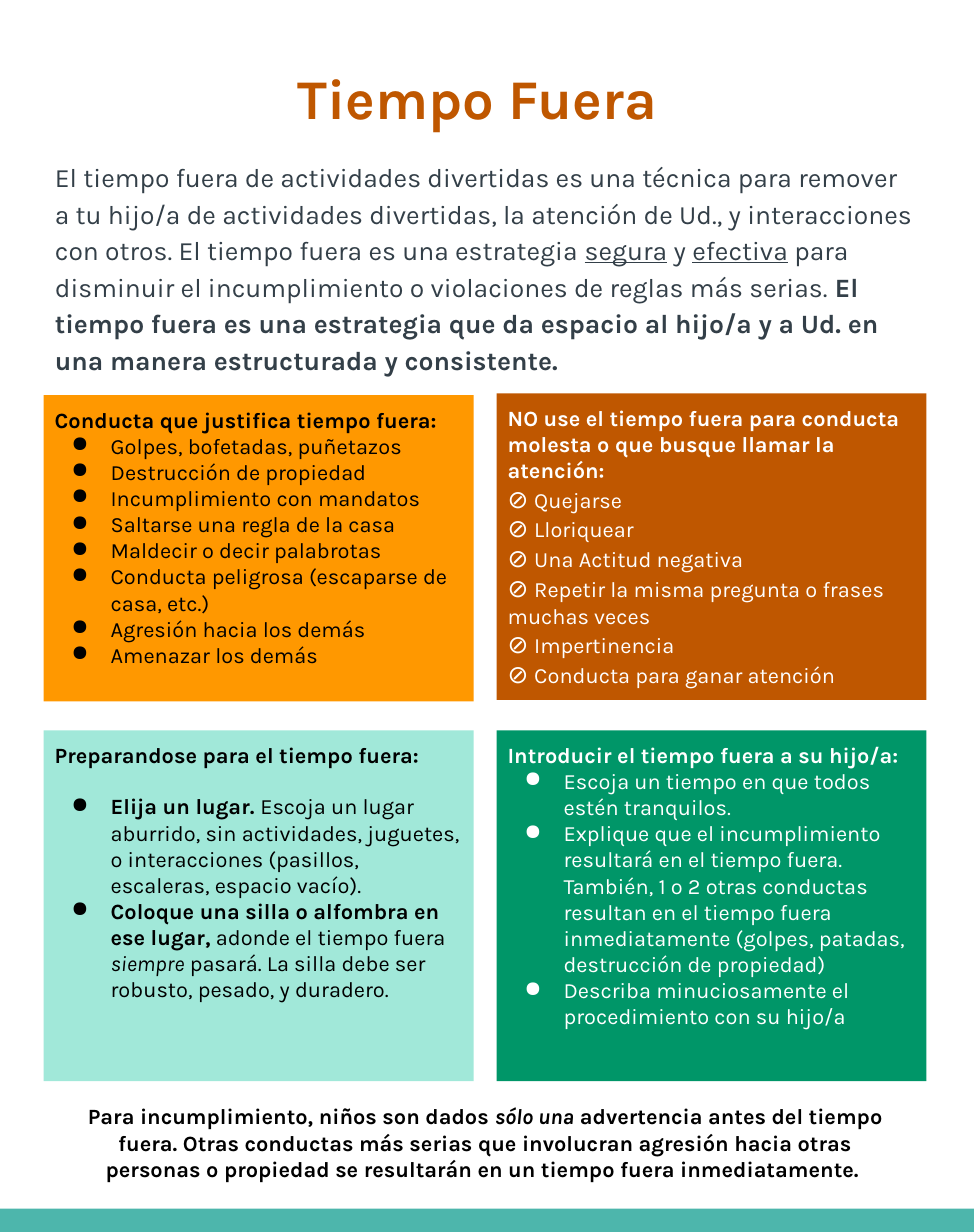
from pptx import Presentation
from pptx.dml.color import RGBColor
from pptx.enum.shapes import MSO_SHAPE as Kind
from pptx.enum.text import MSO_ANCHOR as Anchor, MSO_AUTO_SIZE as Fit, PP_ALIGN as Align
from pptx.oxml import parse_xml
from pptx.oxml.ns import nsdecls
from pptx.util import Pt

# Content: a paragraph is a list of (text, style) runs, style in "b", "i", "u"
FONT = "Karla"
TITLE = [("Tiempo Fuera ", "b")]
INTRO = [
    ("El tiempo fuera de actividades divertidas es una técnica para remover a tu hijo/a "
     "de actividades divertidas, la atención de Ud., y interacciones con otros. "
     "El tiempo fuera es una estrategia ", ""),
    ("segura", "u"), (" y ", ""), ("efectiva", "u"),
    (" para disminuir el incumplimiento o violaciones de reglas más serias. ", ""),
    ("El tiempo fuera es una estrategia que da espacio al hijo/a y a Ud. "
     "en una manera estructurada y consistente.", "b"),
]
NOTE = [
    ("Para incumplimiento, niños son dados ", "b"), ("sólo una", "bi"),
    (" advertencia antes del tiempo fuera. Otras conductas más serias que involucran "
     "agresión hacia otras personas o propiedad se resultarán en un tiempo fuera "
     "inmediatamente. ", "b"),
]
BAN = "⊘ "
# Cards: column, top, height, fill, ink, mark, gap under heading, heading, items
CARDS = [
    (0, 254, 197, "FF9800", "000000", "●", 0, "Conducta que justifica tiempo fuera:", [
        "Golpes, bofetadas, puñetazos",
        "Destrucción de propiedad",
        "Incumplimiento con mandatos",
        "Saltarse una regla de la casa",
        "Maldecir o decir palabrotas",
        "Conducta peligrosa (escaparse de casa, etc.)",
        "Agresión hacia los demás",
        "Amenazar los demás"]),
    (1, 253, 197, "BF5700", "FFFFFF", BAN, 0,
     "NO use el tiempo fuera para conducta molesta o que busque llamar la atención:", [
        "Quejarse",
        "Lloriquear",
        "Una Actitud negativa",
        "Repetir la misma pregunta o frases muchas veces",
        "Impertinencia",
        "Conducta para ganar atención"]),
    (0, 469.5, 225.5, "A1E8D9", "000000", "●", 16.4, "Preparandose para el tiempo fuera:", [
        [("Elija un lugar. ", "b"),
         ("Escoja un lugar aburrido, sin actividades, juguetes, o interacciones "
          "(pasillos, escaleras, espacio vacío).", "")],
        [("Coloque una silla o alfombra en ese lugar,", "b"),
         (" adonde el tiempo fuera ", ""), ("siempre", "i"),
         (" pasará. La silla debe ser robusto, pesado, y duradero.", "")]]),
    (1, 469.5, 225.5, "009668", "FFFFFF", "●", 0, "Introducir el tiempo fuera a su hijo/a:", [
        "Escoja un tiempo en que todos estén tranquilos.",
        "Explique que el incumplimiento resultará en el tiempo fuera. También, 1 o 2 otras "
        "conductas resultan en el tiempo fuera inmediatamente (golpes, patadas, "
        "destrucción de propiedad)",
        "Describa minuciosamente el procedimiento con su hijo/a"]),
]
WIDE, HIGH = 626.4, 792
LEFT, CARD, STEP = 28.1, 276.5, 291.3


def color(code):
    return RGBColor.from_string(code)


def place(shape, x, y, w, h):
    shape.left, shape.top, shape.width, shape.height = Pt(x), Pt(y), Pt(w), Pt(h)


def frame(shape, top=7.2):
    box = shape.text_frame
    box.word_wrap = True
    box.auto_size = Fit.NONE
    box.vertical_anchor = Anchor.TOP
    box.margin_left = box.margin_right = box.margin_bottom = Pt(7.2)
    box.margin_top = Pt(top)
    return box


def write(para, runs, size, ink, align=Align.LEFT):
    para.alignment = align
    para.space_before = Pt(0)
    for text, style in runs:
        run = para.add_run()
        run.text = text
        font = run.font
        font.name, font.size = FONT, Pt(size)
        font.color.rgb = color(ink)
        font.bold, font.italic, font.underline = (key in style for key in "biu")


def bullet(para, mark, ink):
    props = para._p.get_or_add_pPr()
    props.set("marL", str(Pt(36)))
    props.set("indent", str(Pt(-25.2)))
    ns = nsdecls("a")
    props.append(parse_xml(f'<a:buClr {ns}><a:srgbClr val="{ink}"/></a:buClr>'))
    props.append(parse_xml(f'<a:buChar {ns} char="{mark}"/>'))


def block(slide, x, y, w, h, fill):
    shape = slide.shapes.add_shape(Kind.RECTANGLE, Pt(x), Pt(y), Pt(w), Pt(h))
    shape.shadow.inherit = False
    shape.fill.solid()
    shape.fill.fore_color.rgb = color(fill)
    shape.line.fill.background()
    return shape


def card(slide, col, top, high, fill, ink, mark, gap, head, items):
    box = frame(block(slide, LEFT + col * STEP, top, CARD, high, fill))
    para = box.paragraphs[0]
    write(para, [(head, "b")], 14, ink)
    para.space_after = Pt(gap)
    for item in items:
        runs = [(item, "")] if isinstance(item, str) else item
        para = box.add_paragraph()
        if mark == BAN:
            write(para, [(BAN, "")], 16, ink)
        write(para, runs, 14, ink)
        if mark != BAN:
            bullet(para, mark, ink)


def main():
    deck = Presentation()
    deck.slide_width, deck.slide_height = Pt(WIDE), Pt(HIGH)
    slide = deck.slides.add_slide(deck.slide_layouts[1])
    title, body = slide.placeholders

    # Bottom band
    block(slide, 0, 777, WIDE, 15, "4DB6AC")

    # Title and introduction
    place(title, 26.6, 29.5, 570.2, 79.2)
    write(frame(title, 11).paragraphs[0], TITLE, 36, "BF5700", Align.CENTER)
    place(body, LEFT, 93.6, 570.2, 103.7)
    para = frame(body).paragraphs[0]
    write(para, INTRO, 17, "333F48")
    para.line_spacing = 1.15
    props = para._p.get_or_add_pPr()
    props.set("marL", "0")
    props.set("indent", "0")
    props.append(parse_xml(f'<a:buNone {nsdecls("a")}/>'))

    # Four cards
    for row in CARDS:
        card(slide, *row)

    # Closing note
    note = slide.shapes.add_textbox(Pt(36.7), Pt(702), Pt(550.8), Pt(65.5))
    write(frame(note).paragraphs[0], NOTE, 14, "000000", Align.CENTER)

    deck.save("out.pptx")


if __name__ == "__main__":
    main()
